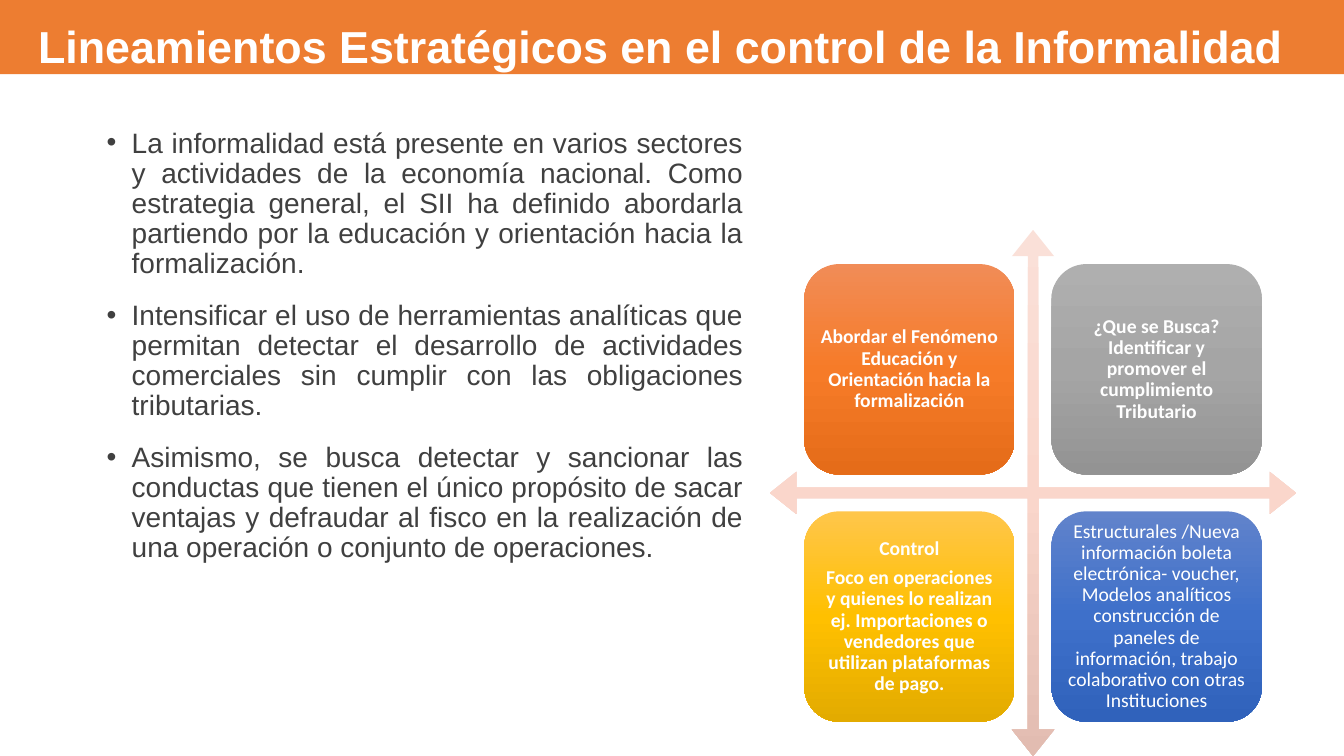
from copy import deepcopy

from pptx import Presentation
from pptx.dml.color import RGBColor
from pptx.enum.shapes import MSO_SHAPE
from pptx.enum.text import MSO_ANCHOR, MSO_AUTO_SIZE, PP_ALIGN
from pptx.oxml.ns import qn
from pptx.util import Pt

RECT, ROUND, QUAD = MSO_SHAPE.RECTANGLE, MSO_SHAPE.ROUNDED_RECTANGLE, MSO_SHAPE.QUAD_ARROW
LEFT, CENTER, JUSTIFY = PP_ALIGN.LEFT, PP_ALIGN.CENTER, PP_ALIGN.JUSTIFY
TOP, MIDDLE = MSO_ANCHOR.TOP, MSO_ANCHOR.MIDDLE

TITLE = "Lineamientos Estratégicos en el control de la Informalidad"
BULLETS = [
    "La informalidad está presente en varios sectores y actividades de la economía nacional. "
    "Como estrategia general, el SII ha definido abordarla partiendo por la educación y "
    "orientación hacia la formalización.",
    "Intensificar el uso de herramientas analíticas que permitan detectar el desarrollo de "
    "actividades comerciales sin cumplir con las obligaciones tributarias.",
    "Asimismo, se busca detectar y sancionar las conductas que tienen el único propósito de "
    "sacar ventajas y defraudar al fisco en la realización de una operación o conjunto de "
    "operaciones.",
]
# Row by row: paragraphs, bold, gradient colours from top to bottom
QUADRANTS = [
    (["Abordar el Fenómeno Educación y Orientación hacia la formalización"],
     True, ("F18C57", "F67B28", "E56C19")),
    (["¿Que se Busca? Identificar y promover el cumplimiento Tributario"],
     True, ("AFAFAF", "A5A5A5", "939393")),
    (["Control",
      "Foco en operaciones y quienes lo realizan ej. Importaciones o vendedores que utilizan "
      "plataformas de pago."],
     True, ("FFC64B", "FFC000", "E3AB00")),
    (["Estructurales /Nueva información boleta electrónica- voucher, Modelos analíticos "
      "construcción de paneles de información, trabajo colaborativo con otras Instituciones"],
     False, ("6183CB", "3E70CA", "3062BB")),
]
ARROW_COLORS = ("FAE0D8", "FAD6CB", "E2BCB1")
ARROW_LEFT, ARROW_TOP, ARROW_SIZE = 550, 164.2, 375.8
SLIDE_W, SLIDE_H = 960, 540


def rgb(value):
    return RGBColor.from_string(value)


def add_shape(s, kind, x, y, w, h):
    sp = s.shapes.add_shape(kind, Pt(x), Pt(y), Pt(w), Pt(h))
    sp.shadow.inherit = False
    sp.line.fill.background()
    return sp


def fill_gradient(sp, colors):
    """Fill from top to bottom with three evenly spaced colours."""
    sp.fill.gradient()
    sp.fill.gradient_angle = 270
    stop_list = sp._element.spPr.find(".//" + qn("a:gsLst"))
    stop_list.append(deepcopy(stop_list[0]))
    for i, (stop, color) in enumerate(zip(sp.fill.gradient_stops, colors)):
        stop.position = i / 2
        stop.color.rgb = rgb(color)


def write(tf, paragraphs, size, color="FFFFFF", font="Arial", bold=False, align=LEFT,
          anchor=TOP, spacing=1, before=0, after=0, inset=None, wrap=True, bullet=False):
    tf.word_wrap = wrap
    tf.auto_size = MSO_AUTO_SIZE.NONE
    tf.vertical_anchor = anchor
    if inset is not None:
        tf.margin_left = tf.margin_top = tf.margin_right = tf.margin_bottom = Pt(inset)
    for i, text in enumerate(paragraphs):
        p = tf.add_paragraph() if i else tf.paragraphs[0]
        p.alignment = align
        p.line_spacing = spacing
        p.space_before, p.space_after = Pt(before), Pt(after)
        if bullet:
            pPr = p._p.get_or_add_pPr()
            pPr.set("marL", str(Pt(18)))
            pPr.set("indent", str(-Pt(18)))
            pPr.append(pPr.makeelement(qn("a:buFont"), {"typeface": "Arial"}))
            pPr.append(pPr.makeelement(qn("a:buChar"), {"char": "•"}))
        r = p.add_run()
        r.text = text
        r.font.name, r.font.size, r.font.bold = font, Pt(size), bold
        r.font.color.rgb = rgb(color)


def main():
    prs = Presentation()
    prs.slide_width, prs.slide_height = Pt(SLIDE_W), Pt(SLIDE_H)
    s = prs.slides.add_slide(prs.slide_layouts[5])

    band = add_shape(s, RECT, 0, 0, SLIDE_W, 53)
    band.fill.solid()
    band.fill.fore_color.rgb = rgb("ED7D31")
    title = s.shapes.title
    band._element.addnext(title._element)  # keep the title in front of the band
    title.left, title.top, title.width, title.height = Pt(20), Pt(10), Pt(911), Pt(46)
    write(title.text_frame, [TITLE], 32, bold=True, wrap=False)

    body = s.shapes.add_textbox(Pt(69), Pt(88.5), Pt(469), Pt(363))
    write(body.text_frame, BULLETS, 20, color="404040", align=JUSTIFY, spacing=0.9,
          before=10, after=5, bullet=True)

    arrow = add_shape(s, QUAD, ARROW_LEFT, ARROW_TOP, ARROW_SIZE, ARROW_SIZE)
    for i, value in enumerate((0.02, 0.04, 0.05)):
        arrow.adjustments[i] = value
    fill_gradient(arrow, ARROW_COLORS)

    margin, size, step = (ARROW_SIZE * k for k in (0.065, 0.4, 0.47))
    for i, (paragraphs, bold, colors) in enumerate(QUADRANTS):
        row, col = divmod(i, 2)
        box = add_shape(s, ROUND, ARROW_LEFT + margin + col * step,
                        ARROW_TOP + margin + row * step, size, size)
        fill_gradient(box, colors)
        write(box.text_frame, paragraphs, 14, font="Calibri", bold=bold, align=CENTER,
              anchor=MIDDLE, spacing=0.9, after=6, inset=4.2)

    prs.save("out.pptx")


if __name__ == "__main__":
    main()
